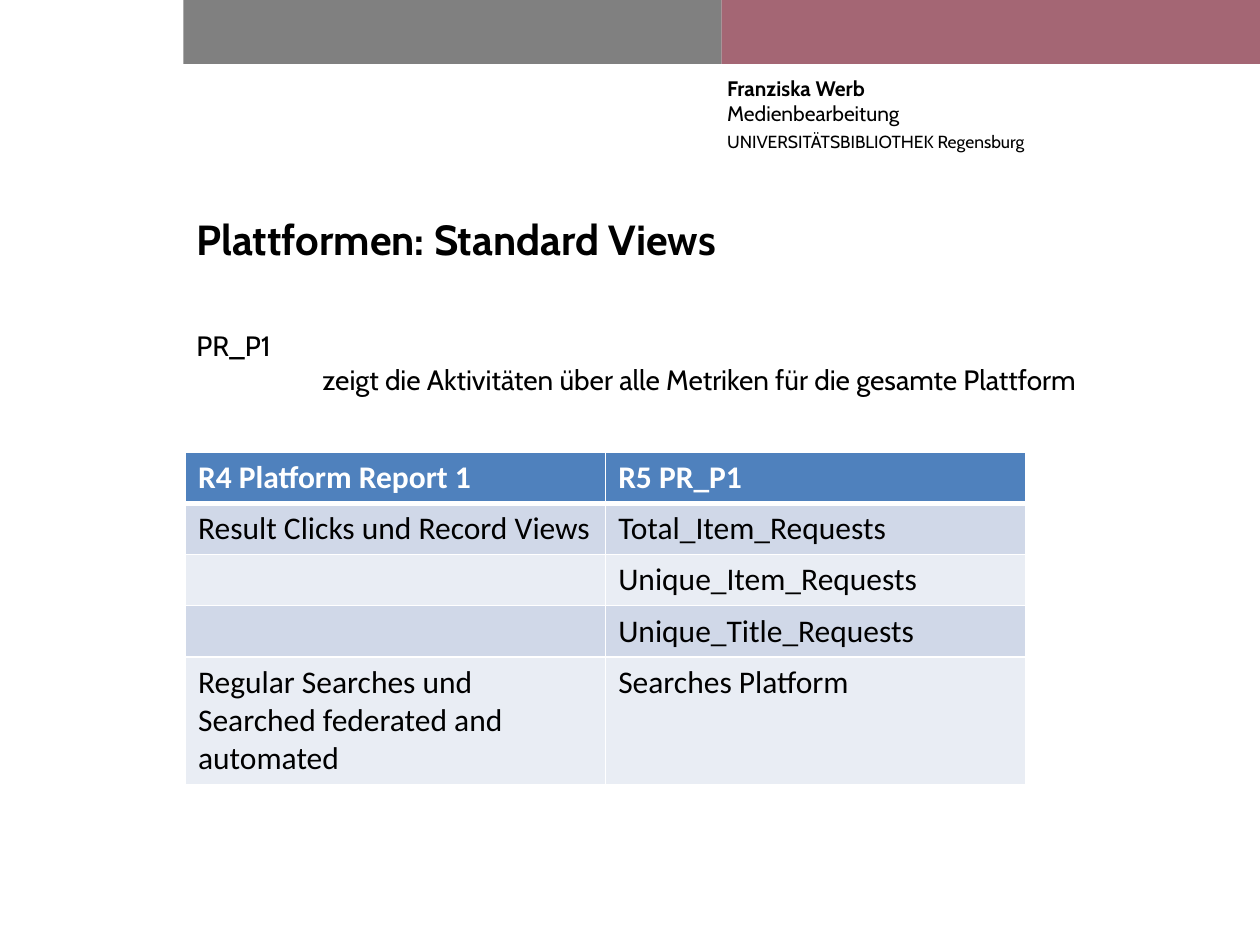
from lxml.etree import SubElement
from pptx import Presentation
from pptx.dml.color import RGBColor
from pptx.enum.shapes import MSO_SHAPE
from pptx.enum.text import MSO_ANCHOR
from pptx.oxml.ns import qn
from pptx.util import Cm, Pt

BLACK = RGBColor(0x00, 0x00, 0x00)
WHITE = RGBColor(0xFF, 0xFF, 0xFF)
GREY = RGBColor(0x80, 0x80, 0x80)
ROSE = RGBColor(0xA4, 0x66, 0x74)
HEADER_BLUE = RGBColor(0x4F, 0x81, 0xBD)
BAND_DARK = RGBColor(0xD0, 0xD8, 0xE8)
BAND_LIGHT = RGBColor(0xE9, 0xED, 0xF4)

BAND_LEFT, BAND_WIDTH, BAND_HEIGHT = 3.7, 10.85, 1.29
BANDS = [GREY, ROSE]

# text, size, bold, left indent in cm, space after in points
SENDER = [
    [("Franziska Werb\v", 12, True), ("Medienbearbeitung", 12, False)],
    [("UNIVERSITÄTSBIBLIOTHEK Regensburg", 10, False)],
]
TITLE = [[("Plattformen: Standard Views", 24, True)]]
BODY = [
    [("PR_P1", 16, False)],
    [("zeigt die Aktivitäten über alle Metriken für die gesamte Plattform", 16, False)],
]
TEXTS = [
    {"at": (14.66, 1.52, 10.26, 2.39), "paragraphs": SENDER, "inset": (0, 0), "after": 3},
    {"at": (3.71, 4.17, 19.96, 1.93), "paragraphs": TITLE},
    {"at": (3.71, 6.5, 19.99, 11.0), "paragraphs": BODY, "indents": (0, 2.54)},
]

REPORTS = [
    ("R4 Platform Report 1", "R5 PR_P1"),
    ("Result Clicks und Record Views", "Total_Item_Requests"),
    ("", "Unique_Item_Requests"),
    ("", "Unique_Title_Requests"),
    ("Regular Searches und Searched federated and automated", "Searches Platform"),
]
TABLE_LEFT, TABLE_TOP, COLUMN_WIDTH = 3.74, 9.12, 8.47
ROW_HEIGHTS = [1.03] * 4 + [2.57]


def apply_format(target, values):
    for name, value in values.items():
        setattr(target, name, value)


def format_font(font, name, size, bold, color):
    apply_format(font, {"name": name, "size": Pt(size), "bold": bold})
    font.color.rgb = color


def add_band(slide, index, color):
    band = slide.shapes.add_shape(
        MSO_SHAPE.RECTANGLE, Cm(BAND_LEFT + index * BAND_WIDTH), 0,
        Cm(BAND_WIDTH), Cm(BAND_HEIGHT))
    band.shadow.inherit = False
    band.fill.solid()
    band.fill.fore_color.rgb = color
    band.line.fill.background()


def add_text(slide, at, paragraphs, inset=(0.25, 0.13), after=0, indents=()):
    frame = slide.shapes.add_textbox(*map(Cm, at)).text_frame
    across, down = map(Cm, inset)
    apply_format(frame, {
        "word_wrap": True, "vertical_anchor": MSO_ANCHOR.TOP,
        "margin_left": across, "margin_right": across,
        "margin_top": down, "margin_bottom": down})
    for index, runs in enumerate(paragraphs):
        paragraph = frame.add_paragraph() if index else frame.paragraphs[0]
        paragraph.space_after = Pt(after)
        if indents:
            paragraph._p.get_or_add_pPr().set("marL", str(Cm(indents[index])))
        for text, size, bold in runs:
            run = paragraph.add_run()
            run.text = text.rstrip("\v")
            format_font(run.font, "Cabin", size, bold, BLACK)
            if text.endswith("\v"):
                paragraph.add_line_break()


def add_borders(cell, row):
    widths = {
        "a:lnL": 1, "a:lnR": 1,
        "a:lnT": 3 if row == 1 else 1, "a:lnB": 3 if row == 0 else 1}
    properties = cell._tc.get_or_add_tcPr()
    for tag, width in widths.items():
        border = SubElement(properties, qn(tag), w=str(Pt(width)))
        fill = SubElement(border, qn("a:solidFill"))
        SubElement(fill, qn("a:srgbClr"), val=str(WHITE))


def add_reports(slide):
    table = slide.shapes.add_table(
        len(REPORTS), len(REPORTS[0]), Cm(TABLE_LEFT), Cm(TABLE_TOP),
        Cm(COLUMN_WIDTH * len(REPORTS[0])), Cm(sum(ROW_HEIGHTS))).table
    for column in table.columns:
        column.width = Cm(COLUMN_WIDTH)
    for row, (texts, height) in enumerate(zip(REPORTS, ROW_HEIGHTS)):
        table.rows[row].height = Cm(height)
        header = row == 0
        background = HEADER_BLUE if header else (BAND_LIGHT, BAND_DARK)[row % 2]
        for column, text in enumerate(texts):
            cell = table.cell(row, column)
            add_borders(cell, row)
            cell.fill.solid()
            cell.fill.fore_color.rgb = background
            if text:
                run = cell.text_frame.paragraphs[0].add_run()
                run.text = text
                format_font(run.font, "Calibri", 18, header, WHITE if header else BLACK)


def main():
    presentation = Presentation()
    apply_format(presentation, {"slide_width": Cm(25.4), "slide_height": Cm(19.05)})
    slide = presentation.slides.add_slide(presentation.slide_layouts[6])
    for index, color in enumerate(BANDS):
        add_band(slide, index, color)
    for text in TEXTS:
        add_text(slide, **text)
    add_reports(slide)
    presentation.save("out.pptx")


if __name__ == "__main__":
    main()
